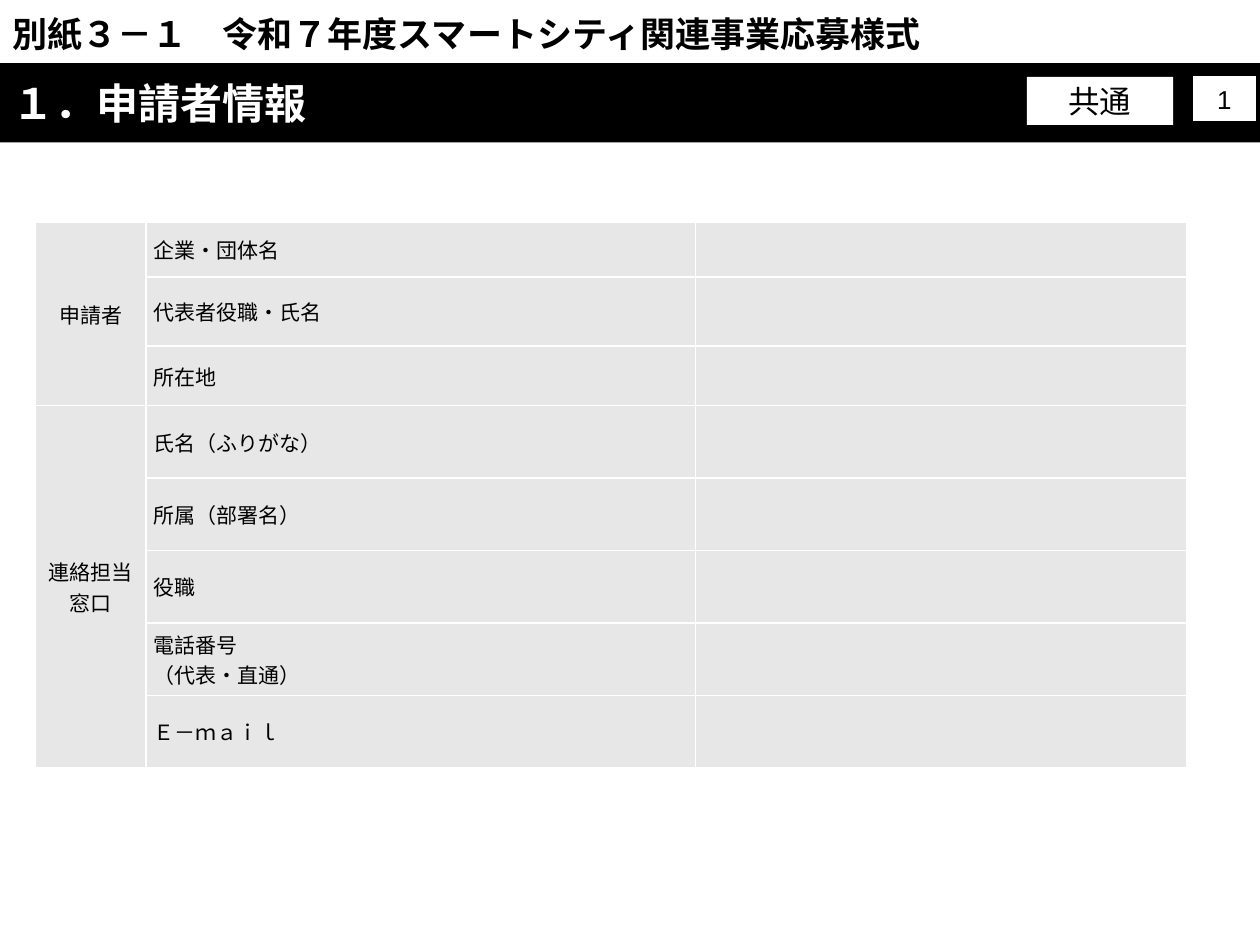
from dataclasses import dataclass

from lxml import etree
from pptx import Presentation
from pptx.dml.color import RGBColor
from pptx.enum.shapes import MSO_SHAPE
from pptx.enum.text import MSO_ANCHOR, MSO_AUTO_SIZE, PP_ALIGN
from pptx.oxml.ns import qn
from pptx.util import Cm, Pt

RECTANGLE = MSO_SHAPE.RECTANGLE
MIDDLE, TOP = MSO_ANCHOR.MIDDLE, MSO_ANCHOR.TOP
NO_AUTOFIT = MSO_AUTO_SIZE.NONE
LEFT, CENTER, JUSTIFY = PP_ALIGN.LEFT, PP_ALIGN.CENTER, PP_ALIGN.JUSTIFY


@dataclass(frozen=True)
class Theme:
    black: RGBColor = RGBColor(0, 0, 0)
    white: RGBColor = RGBColor(255, 255, 255)
    cell: RGBColor = RGBColor(0xE7, 0xE7, 0xE7)
    latin: str = "Arial"
    japanese: str = "Noto Sans CJK JP"
    title: float = 24
    form_name: float = 20
    category: float = 18
    page: float = 14.8
    table: float = 12
    border: float = 1
    page_line: float = 0.75


THEME = Theme()
TITLE = "１．申請者情報\u3000"
FORM_NAME = "別紙３－１\u3000令和７年度スマートシティ関連事業応募様式"
SECTIONS = {
    "申請者": ["企業・団体名", "代表者役職・氏名", "所在地"],
    "連絡担当窓口": ["氏名（ふりがな）", "所属（部署名）", "役職",
               "電話番号\n（代表・直通）", "Ｅ－ｍａｉｌ"],
}
COLUMN_WIDTHS = [2.22, 11.08, 9.9]
ROW_HEIGHTS = [1.1, 1.4, 1.2] + [1.46] * 5


def write(frame, text, size, color=THEME.black, face=THEME.latin, bold=False, align=LEFT):
    frame.text = text
    for paragraph in frame.paragraphs:
        paragraph.alignment = align
        for run in paragraph.runs:
            font = run.font
            for name, value in {"size": Pt(size), "name": face, "bold": bold}.items():
                setattr(font, name, value)
            font.color.rgb = color
            etree.SubElement(run._r.get_or_add_rPr(), qn("a:ea"), typeface=THEME.japanese)


def place(shape, box):
    for name, value in zip(("left", "top", "width", "height"), box):
        setattr(shape, name, Cm(value))


def add_label(slide, box, text, size, line=None):
    """Add a white box with centred text, outlined if a line width is given."""
    label = slide.shapes.add_shape(RECTANGLE, *map(Cm, box))
    label.shadow.inherit = False
    label.fill.solid()
    label.fill.fore_color.rgb = THEME.white
    if line:
        label.line.color.rgb = THEME.black
        label.line.width = Pt(line)
    else:
        label.line.fill.background()
    label.text_frame.vertical_anchor = MIDDLE
    write(label.text_frame, text, size, align=CENTER)


def add_form_name(slide, box):
    frame = slide.shapes.add_textbox(*map(Cm, box)).text_frame
    frame.word_wrap = True
    frame.vertical_anchor = TOP
    write(frame, FORM_NAME, THEME.form_name, bold=True)


def add_title_bar(slide, box):
    bar = slide.shapes.title
    place(bar, box)
    bar.fill.solid()
    bar.fill.fore_color.rgb = THEME.black
    bar.text_frame.auto_size = NO_AUTOFIT
    bar.text_frame.vertical_anchor = MIDDLE
    write(bar.text_frame, TITLE, THEME.title, THEME.white, THEME.japanese, bold=True)

    left, top, width, _ = box
    right = left + width
    add_label(slide, (right - 4.7, top + 0.28, 2.95, 0.97), "共通", THEME.category)
    add_label(slide, (right - 1.37, top + 0.25, 1.3, 0.94), "1", THEME.page, THEME.page_line)


def format_cell(cell):
    margins = {"margin_left": Cm(0.15), "margin_right": Cm(0.15),
               "margin_top": 0, "margin_bottom": 0}
    for name, value in {**margins, "vertical_anchor": MIDDLE}.items():
        setattr(cell, name, value)
    properties = cell._tc.get_or_add_tcPr()
    for side in ("a:lnL", "a:lnR", "a:lnT", "a:lnB"):
        border = etree.SubElement(properties, qn(side), w=str(Pt(THEME.border)))
        fill = etree.SubElement(border, qn("a:solidFill"))
        etree.SubElement(fill, qn("a:srgbClr"), val=str(THEME.white))
    cell.fill.solid()
    cell.fill.fore_color.rgb = THEME.cell


def add_applicant_table(slide, box):
    table = slide.shapes.add_table(
        len(ROW_HEIGHTS), len(COLUMN_WIDTHS), *map(Cm, box)).table
    table.first_row = table.horz_banding = False
    for column, width in zip(table.columns, COLUMN_WIDTHS):
        column.width = Cm(width)
    for row, height in zip(table.rows, ROW_HEIGHTS):
        row.height = Cm(height)
    for cell in table.iter_cells():
        format_cell(cell)

    first = 0
    for section, items in SECTIONS.items():
        heading = table.cell(first, 0)
        heading.merge(table.cell(first + len(items) - 1, 0))
        heading._tc.get_or_add_tcPr().set("vert", "eaVert")
        write(heading.text_frame, section, THEME.table, face=THEME.japanese, align=CENTER)
        for row, item in enumerate(items, first):
            write(table.cell(row, 1).text_frame, item, THEME.table,
                  face=THEME.japanese, align=JUSTIFY)
        first += len(items)


def main():
    deck = Presentation()
    deck.slide_width, deck.slide_height = Cm(25.4), Cm(19.05)
    slide = deck.slides.add_slide(deck.slide_layouts.get_by_name("Title Only"))
    add_applicant_table(slide, (0.72, 4.48, sum(COLUMN_WIDTHS), sum(ROW_HEIGHTS)))
    add_title_bar(slide, (0, 1.27, 25.4, 1.6))
    add_form_name(slide, (0, 0.13, 19.9, 1.11))
    deck.save("out.pptx")


if __name__ == "__main__":
    main()
